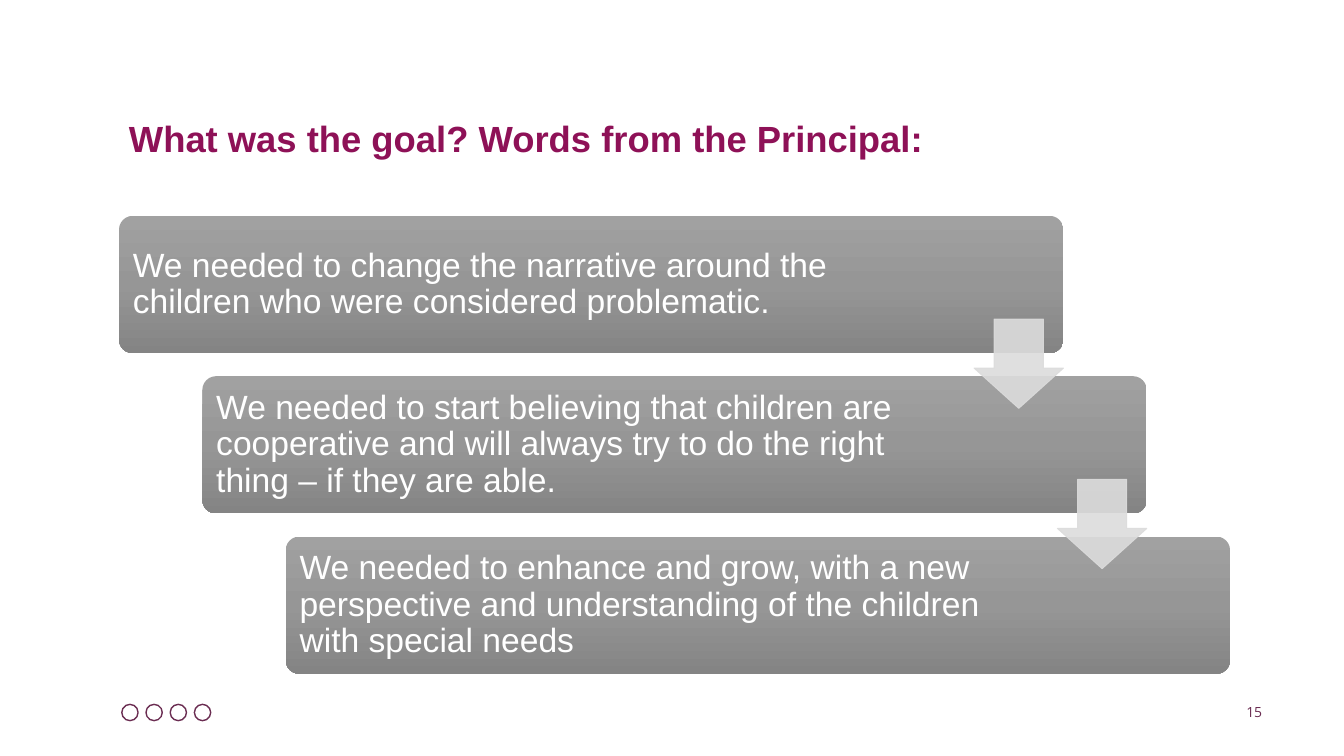
from copy import deepcopy
from dataclasses import dataclass

from lxml.etree import SubElement
from pptx import Presentation
from pptx.dml.color import RGBColor
from pptx.enum.shapes import MSO_SHAPE
from pptx.enum.text import MSO_ANCHOR, PP_ALIGN
from pptx.oxml.ns import qn
from pptx.util import Cm, Pt


@dataclass(frozen=True)
class Theme:
    heading: str = "8E1157"
    accent: str = "6B2D52"
    card_text: str = "FFFFFF"
    arrow: str = "DCDCDC"
    card_gradient: tuple = ((0, "A1A1A1"), (0.5, "969696"), (1, "848484"))
    body_font: str = "Arial"
    number_font: str = "Open Sans"
    title_size: int = 26
    card_size: int = 24
    number_size: int = 10


THEME = Theme()

CARD_LEFT, CARD_TOP = 3.0, 5.44
CARD_WIDTH, CARD_HEIGHT = 23.8, 3.46
STEP_RIGHT, STEP_DOWN = 2.1, 4.04
CARD_PADDING = 0.1
ARROW_SIZE, ARROW_DROP = 2.25, 2.6

# Each goal with the width of its text
GOALS = (
    ("We needed to change the narrative around the children who were "
     "considered problematic.", 20.07),
    ("We needed to start believing that children are cooperative and will "
     "always try to do the right thing – if they are able.", 19.25),
    ("We needed to enhance and grow, with a new perspective and "
     "understanding of the children with special needs", 19.25),
)


def add_text(slide, text, left, top, width, height, *, size, color,
             font=THEME.body_font, bold=False, align=PP_ALIGN.LEFT,
             anchor=MSO_ANCHOR.TOP, line_spacing=0.9, margin=0.13):
    box = slide.shapes.add_textbox(Cm(left), Cm(top), Cm(width), Cm(height))
    frame = box.text_frame
    frame.word_wrap = True
    frame.vertical_anchor = anchor
    frame.margin_left = frame.margin_right = Cm(0.25)
    frame.margin_top = frame.margin_bottom = Cm(margin)
    paragraph = frame.paragraphs[0]
    paragraph.alignment = align
    paragraph.line_spacing = line_spacing
    run = paragraph.add_run()
    run.text = text
    run.font.name = font
    run.font.size = Pt(size)
    run.font.bold = bold
    run.font.color.rgb = RGBColor.from_string(color)


def add_preset(slide, kind, left, top, width, height):
    shape = slide.shapes.add_shape(kind, Cm(left), Cm(top), Cm(width), Cm(height))
    shape.shadow.inherit = False
    return shape


def fill_gradient(shape, stops):
    """Fill from top to bottom with any number of (position, colour) stops."""
    shape.fill.gradient()
    shape.fill.gradient_angle = 270
    stop_list = shape.element.spPr.find(".//" + qn("a:gsLst"))
    while len(stop_list) < len(stops):
        stop_list.append(deepcopy(stop_list[0]))
    for stop, (position, color) in zip(shape.fill.gradient_stops, stops):
        stop.position = position
        stop.color.rgb = RGBColor.from_string(color)


def add_card(slide, text, text_width, left, top):
    card = add_preset(slide, MSO_SHAPE.ROUNDED_RECTANGLE, left, top,
                      CARD_WIDTH, CARD_HEIGHT)
    card.adjustments[0] = 0.1
    card.line.fill.background()
    fill_gradient(card, THEME.card_gradient)
    add_text(slide, text, left + CARD_PADDING, top + CARD_PADDING,
             text_width, CARD_HEIGHT - 2 * CARD_PADDING,
             size=THEME.card_size, color=THEME.card_text,
             anchor=MSO_ANCHOR.MIDDLE, margin=0.25)


def add_arrow(slide, left, top):
    arrow = add_preset(slide, MSO_SHAPE.DOWN_ARROW, left, top,
                       ARROW_SIZE, ARROW_SIZE)
    arrow.adjustments[0] = 0.55
    arrow.adjustments[1] = 0.45
    arrow.fill.solid()
    arrow.line.width = Pt(0.75)
    for color in (arrow.fill.fore_color, arrow.line.color):
        color.rgb = RGBColor.from_string(THEME.arrow)
    for color_element in arrow.element.spPr.iter(qn("a:srgbClr")):
        SubElement(color_element, qn("a:alpha"), val="90000")


def add_footer(slide):
    for index in range(4):
        circle = add_preset(slide, MSO_SHAPE.OVAL, 3.07 + 0.61 * index, 17.75,
                            0.41, 0.41)
        circle.fill.background()
        circle.line.color.rgb = RGBColor.from_string(THEME.accent)
        circle.line.width = Pt(1)
    add_text(slide, "15", 29.82, 17.25, 2.24, 1.02,
             size=THEME.number_size, color=THEME.accent,
             font=THEME.number_font, align=PP_ALIGN.RIGHT,
             anchor=MSO_ANCHOR.BOTTOM, line_spacing=1.0)


def add_staircase(slide):
    """Place the cards in steps, then an arrow from each card to the next."""
    corners = [(CARD_LEFT + STEP_RIGHT * index, CARD_TOP + STEP_DOWN * index)
               for index in range(len(GOALS))]
    for (text, text_width), (left, top) in zip(GOALS, corners):
        add_card(slide, text, text_width, left, top)
    for left, top in corners[:-1]:
        add_arrow(slide, left + CARD_WIDTH - ARROW_SIZE, top + ARROW_DROP)


def main():
    presentation = Presentation()
    presentation.slide_width = Cm(33.87)
    presentation.slide_height = Cm(19.05)
    slide = presentation.slides.add_slide(presentation.slide_layouts[6])
    add_footer(slide)
    add_text(slide, "What was the goal? Words from the Principal:",
             CARD_LEFT, 2.92, 28, 1.98,
             size=THEME.title_size, color=THEME.heading, bold=True)
    add_staircase(slide)
    presentation.save("out.pptx")


if __name__ == "__main__":
    main()
